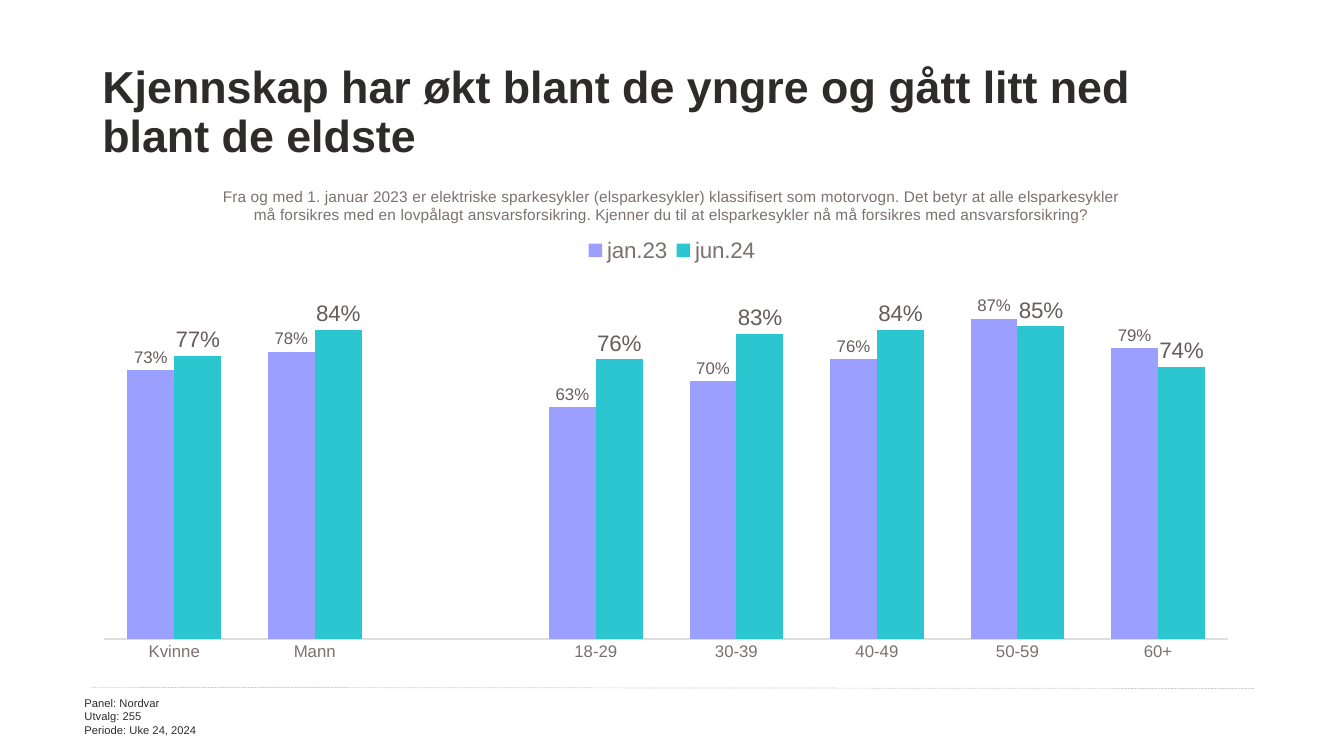
import pptx
import pptx.chart.data
import pptx.dml.color
import pptx.enum.chart
import pptx.enum.dml
import pptx.enum.shapes
import pptx.enum.text
import pptx.oxml
import pptx.oxml.ns
import pptx.util
from pptx.util import Cm

INK, GREY, LABEL = "2F2B2B", "7C7171", "665D5D"
QUESTION = (
    "Fra og med 1. januar 2023 er elektriske sparkesykler (elsparkesykler) klassifisert som motorvogn. "
    "Det betyr at alle elsparkesykler må forsikres med en lovpålagt ansvarsforsikring. "
    "Kjenner du til at elsparkesykler nå må forsikres med ansvarsforsikring?"
)
AGE_AND_GENDER = ["Kvinne", "Mann", " ", "18-29", "30-39", "40-49", "50-59", "60+"]
SURVEYS = [
    ("jan.23", [0.73, 0.78, None, 0.63, 0.7, 0.76, 0.87, 0.79], "9B9FFF", 12),
    ("jun.24", [0.77, 0.84, None, 0.76, 0.83, 0.84, 0.85, 0.74], "2CC6D0", 16),
]


def rgb(value):
    """Return a colour from a hex string."""
    return pptx.dml.color.RGBColor.from_string(value)


def set_values(target, values):
    """Set each attribute of the target from a dict."""
    for name, value in values.items():
        setattr(target, name, value)


def set_font(font, size, color, bold=False):
    """Format a font in Arial."""
    set_values(font, {"name": "Arial", "size": pptx.util.Pt(size), "bold": bold})
    font.color.rgb = rgb(color)


def add_text(slide, box, lines, size, frame_format, paragraph_format, bold=False):
    """Add a text box with one paragraph per line."""
    text_frame = slide.shapes.add_textbox(*map(Cm, box)).text_frame
    set_values(text_frame, {"word_wrap": True, **frame_format})
    text_frame.text = "\n".join(lines)
    for paragraph in text_frame.paragraphs:
        set_values(paragraph, paragraph_format)
        set_font(paragraph.runs[0].font, size, INK, bold)


def add_dotted_line(slide, start, end):
    """Add a thin dotted line without shadow."""
    connector = slide.shapes.add_connector(
        pptx.enum.shapes.MSO_CONNECTOR.STRAIGHT, *map(Cm, start + end)
    )
    connector.line.color.rgb = rgb("BFBFBF")
    set_values(connector.line, {
        "width": pptx.util.Pt(0.5),
        "dash_style": pptx.enum.dml.MSO_LINE.ROUND_DOT,
    })
    properties = connector.element.find(pptx.oxml.ns.qn("p:spPr"))
    properties.append(pptx.oxml.parse_xml(f"<a:effectLst {pptx.oxml.ns.nsdecls('a')}/>"))


def place_part(chart, tag, index, position, inner=False):
    """Give a chart part a manual layout in fractions of the chart."""
    element = chart.element.find(".//" + pptx.oxml.ns.qn(tag))
    for layout in element.findall(pptx.oxml.ns.qn("c:layout")):
        element.remove(layout)
    target = '<c:layoutTarget val="inner"/>' if inner else ""
    modes = "".join(f'<c:{axis}Mode val="edge"/>' for axis in "xy")
    lengths = "".join(f'<c:{name} val="{value}"/>' for name, value in zip("xywh", position))
    element.insert(index, pptx.oxml.parse_xml(
        f"<c:layout {pptx.oxml.ns.nsdecls('c')}><c:manualLayout>"
        f"{target}{modes}{lengths}</c:manualLayout></c:layout>"
    ))


def format_axes(chart):
    """Show the category axis and leave the value axis bare."""
    no_mark = pptx.enum.chart.XL_TICK_MARK.NONE
    shared = {"major_tick_mark": no_mark, "minor_tick_mark": no_mark, "has_major_gridlines": False}
    for axis in (chart.category_axis, chart.value_axis):
        set_values(axis, shared)
        set_font(axis.tick_labels.font, 12, GREY)
    chart.category_axis.format.line.color.rgb = rgb("E1DEDE")
    chart.category_axis.format.line.width = pptx.util.Pt(0.75)
    set_values(chart.value_axis, {
        "minimum_scale": 0,
        "maximum_scale": 1,
        "major_unit": 0.2,
        "tick_label_position": pptx.enum.chart.XL_TICK_LABEL_POSITION.NONE,
    })
    chart.value_axis.format.line.fill.background()


def format_series(series, color, label_size):
    """Colour a series and label its columns."""
    series.format.fill.solid()
    series.format.fill.fore_color.rgb = rgb(color)
    set_values(series.data_labels, {
        "show_value": True,
        "number_format": "0%",
        "number_format_is_linked": False,
        "position": pptx.enum.chart.XL_LABEL_POSITION.OUTSIDE_END,
    })
    set_font(series.data_labels.font, label_size, LABEL)


def add_survey_chart(slide, box):
    """Add the clustered columns that compare the two surveys."""
    data = pptx.chart.data.CategoryChartData(number_format="0%")
    data.categories = AGE_AND_GENDER
    for name, values, _, _ in SURVEYS:
        data.add_series(name, values)
    chart = slide.shapes.add_chart(
        pptx.enum.chart.XL_CHART_TYPE.COLUMN_CLUSTERED, *map(Cm, box), data
    ).chart
    set_font(chart.font, 10, INK)
    set_values(chart, {"has_title": True, "has_legend": True})
    title_frame = chart.chart_title.text_frame
    title_frame.text = QUESTION
    set_font(title_frame.paragraphs[0].runs[0].font, 11, GREY)
    set_values(chart.legend, {
        "position": pptx.enum.chart.XL_LEGEND_POSITION.TOP,
        "include_in_layout": False,
    })
    set_font(chart.legend.font, 16, GREY)
    format_axes(chart)
    plot = chart.plots[0]
    set_values(plot, {"gap_width": 100, "overlap": 0, "vary_by_categories": False})
    for series, (_, _, color, label_size) in zip(plot.series, SURVEYS):
        format_series(series, color, label_size)
    place_part(chart, "c:plotArea", 0, (0.01, 0.21, 0.97, 0.71), inner=True)
    place_part(chart, "c:title", 1, (0.11, 0.04))
    place_part(chart, "c:legend", 1, (0.42, 0.14, 0.16, 0.06))


def main():
    """Build the slide and save it."""
    presentation = pptx.Presentation()
    set_values(presentation, {"slide_width": Cm(33.87), "slide_height": Cm(19.05)})
    slide = presentation.slides.add_slide(presentation.slide_layouts[6])
    add_dotted_line(slide, (2.29, 17.32), (31.62, 17.35))
    add_text(
        slide, (2.33, 1.02, 29.21, 3.68),
        ["Kjennskap har økt blant de yngre og gått litt ned blant de eldste"], 32,
        {"vertical_anchor": pptx.enum.text.MSO_ANCHOR.MIDDLE}, {"line_spacing": 0.9}, bold=True,
    )
    add_survey_chart(slide, (2.33, 4.09, 29.21, 13.06))
    add_text(
        slide, (1.88, 17.42, 8.05, 1.27),
        ["Panel: Nordvar", "Utvalg: 255", "Periode: Uke 24, 2024"], 8,
        {"auto_size": pptx.enum.text.MSO_AUTO_SIZE.SHAPE_TO_FIT_TEXT}, {},
    )
    presentation.save("out.pptx")


if __name__ == "__main__":
    main()
